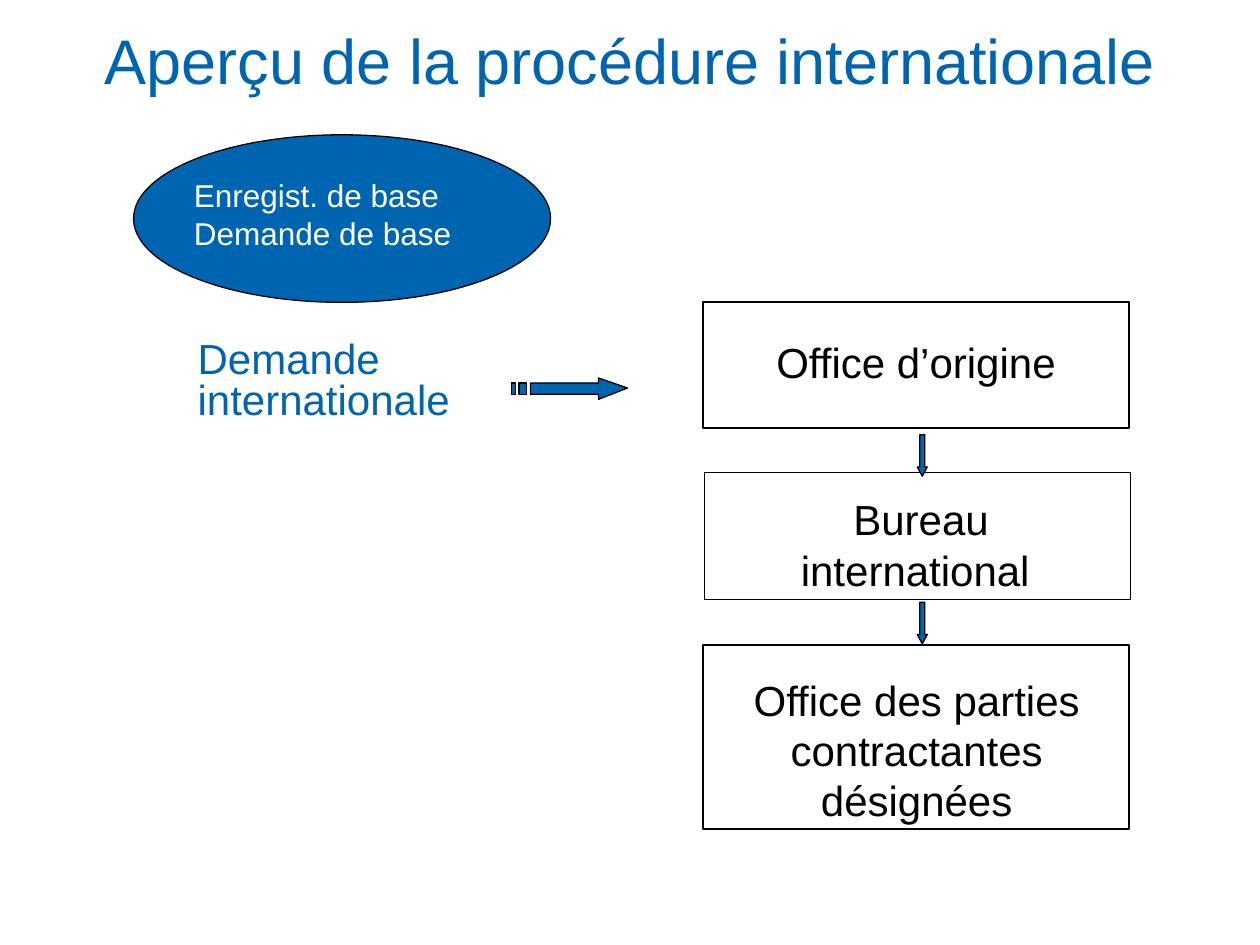
from pptx import Presentation
from pptx.dml.color import RGBColor
from pptx.enum.shapes import MSO_SHAPE
from pptx.enum.text import MSO_ANCHOR, PP_ALIGN
from pptx.util import Inches, Pt

COLORS = {"blue": "0065B0", "black": "000000", "white": "FFFFFF"}
TITLE = "Aperçu de la procédure internationale"
BASIS = "Enregist. de base\vDemande de base"
APPLICATION = "Demande\ninternationale"
OFFICES = [
    ("Office d’origine", (5.81, 2.62, 2.92, 0.5), (5.58, 2.4, 3.38, 1), 1),
    ("Bureau international ", (5.85, 3.87, 2.92, 0.91), (5.59, 3.75, 3.38, 1.01), 0.75),
    ("Office des parties contractantes désignées", (5.62, 5.3, 3.31, 1.31), (5.58, 5.12, 3.38, 1.46), 0.75),
]
DOWN_ARROWS = [(7.28, top, 0.08, 0.33) for top in (3.45, 4.78)]
STRIPES = [(4.12, 4.18), (4.06, 4.09)]
SHAFT_TOP, SHAFT_BOTTOM = 3.04, 3.13
ARROW_HEAD = [
    (4.75, 3), (4.75, SHAFT_TOP), (4.21, SHAFT_TOP), (4.21, SHAFT_BOTTOM),
    (4.75, SHAFT_BOTTOM), (4.75, 3.17), (4.98, 3.08),
]


def color(name):
    return RGBColor.from_string(COLORS[name])


def style_shape(shape, fill=None, line=None):
    shape.shadow.inherit = False
    if fill:
        shape.fill.solid()
        shape.fill.fore_color.rgb = color(fill)
    else:
        shape.fill.background()
    if line:
        shape.line.color.rgb = color("black")
        shape.line.width = Pt(line)
    else:
        shape.line.fill.background()


def add_preset(slide, kind, box, fill=None, line=None):
    shape = slide.shapes.add_shape(kind, *map(Inches, box))
    style_shape(shape, fill, line)
    return shape


def write(shape, text, size, font_color, align=PP_ALIGN.LEFT, spacing=None,
          anchor=MSO_ANCHOR.TOP, wrap=True):
    frame = shape.text_frame
    frame.word_wrap = wrap
    frame.vertical_anchor = anchor
    frame.text = text
    for paragraph in frame.paragraphs:
        paragraph.alignment = align
        paragraph.line_spacing = spacing
        paragraph.font.name = "Arial"
        paragraph.font.size = Pt(size)
        paragraph.font.color.rgb = color(font_color)


def add_text(slide, box, text, font_color, **options):
    write(slide.shapes.add_textbox(*map(Inches, box)), text, 24, font_color, **options)


def add_striped_arrow(slide):
    stripes = [
        [(left, SHAFT_TOP), (left, SHAFT_BOTTOM), (right, SHAFT_BOTTOM), (right, SHAFT_TOP)]
        for left, right in STRIPES
    ]
    head, *bars = [
        [(Inches(x), Inches(y)) for x, y in outline] for outline in [ARROW_HEAD, *stripes]
    ]
    builder = slide.shapes.build_freeform(*head[0])
    builder.add_line_segments(head[1:], close=True)
    for bar in bars:
        builder.move_to(*bar[0])
        builder.add_line_segments(bar[1:], close=True)
    style_shape(builder.convert_to_shape(), "blue", 0.75)


def main():
    """Build the slide on the international procedure."""
    presentation = Presentation()
    presentation.slide_width, presentation.slide_height = Inches(10), Inches(7.5)
    slide = presentation.slides.add_slide(presentation.slide_layouts[5])

    title = slide.shapes.title
    title.left, title.top, title.width, title.height = map(Inches, (0, 0.13, 10, 0.68))
    write(title, TITLE, 36, "blue", align=PP_ALIGN.CENTER, anchor=MSO_ANCHOR.MIDDLE)

    add_text(slide, (1.47, 2.67, 2.22, 0.74), APPLICATION, "blue", spacing=0.8, wrap=False)
    for text, text_box, frame_box, line in OFFICES:
        add_preset(slide, MSO_SHAPE.RECTANGLE, frame_box, line=line)
        add_text(slide, text_box, text, "black", align=PP_ALIGN.CENTER)

    for box in DOWN_ARROWS:
        arrow = add_preset(slide, MSO_SHAPE.DOWN_ARROW, box, "blue", 0.75)
        arrow.adjustments[0] = 0.5
        arrow.adjustments[1] = 0.92
    add_striped_arrow(slide)

    add_preset(slide, MSO_SHAPE.OVAL, (1.06, 1.07, 3.31, 1.33), "blue", 0.75)
    label = add_preset(slide, MSO_SHAPE.RECTANGLE, (1.44, 1.35, 2.63, 0.71), "blue")
    write(label, BASIS, 18, "white")

    presentation.save("out.pptx")


if __name__ == "__main__":
    main()
